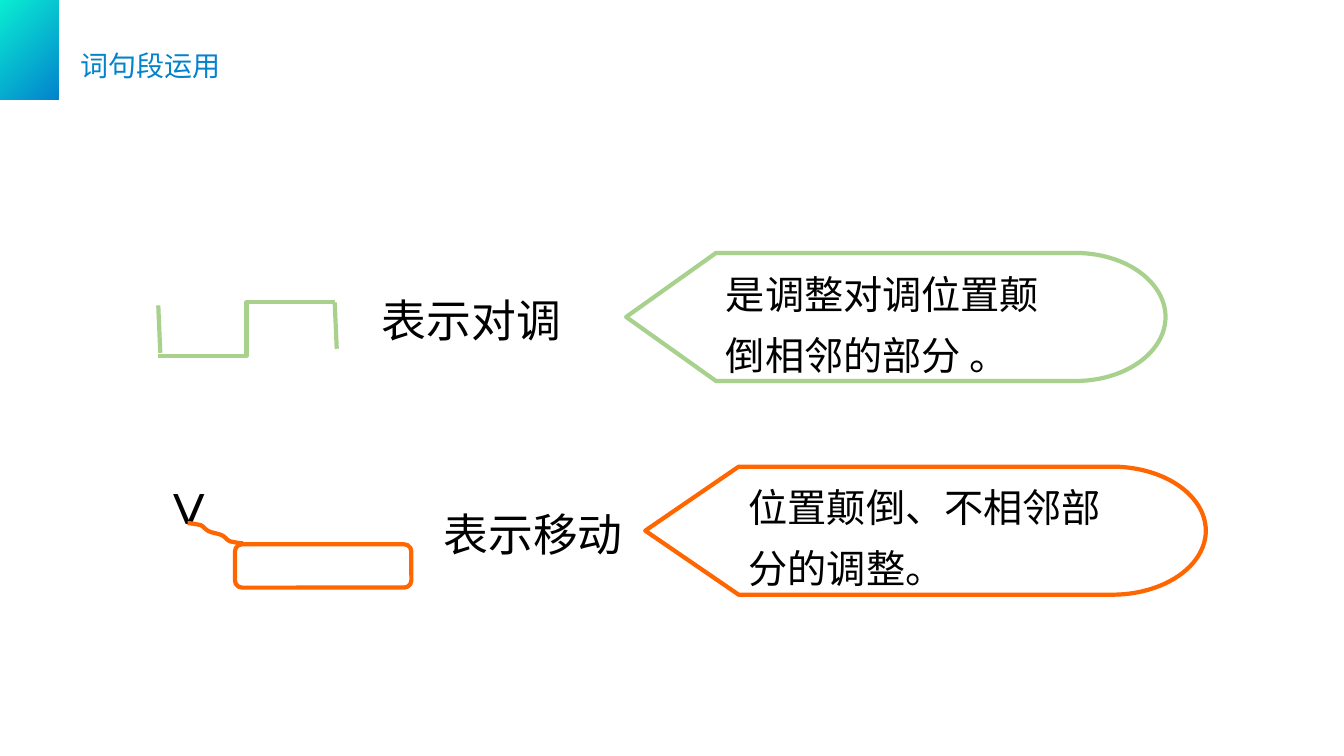
from lxml.etree import SubElement
from pptx import Presentation
from pptx.dml.color import RGBColor
from pptx.enum.shapes import MSO_CONNECTOR, MSO_SHAPE
from pptx.enum.text import MSO_ANCHOR, PP_ALIGN
from pptx.oxml.ns import qn
from pptx.util import Inches, Pt

GREEN, ORANGE, BLUE, TEAL, BLACK = "A9D18E", "FF6600", "0383CD", "0AEDD2", "000000"
TITLE = ("词句段运用", (0.7, 0.46, 2.28, 0.41))
LABELS = [
    ("表示对调", (3.69, 2.82, 2.3, 0.71), 32, 0),
    ("表示移动", (4.3, 4.97, 2.1, 0.64), 32, 0),
    ("<", (1.58, 4.66, 0.5, 0.84), 44, 270),
]
CALLOUTS = [
    ("是调整对调位置颠倒相邻的部分 。", (6.21, 2.51, 5.35, 1.27), GREEN),
    ("位置颠倒、不相邻部分的调整。", (6.4, 4.63, 5.56, 1.27), ORANGE),
]
SWAP_LINES = [
    (MSO_CONNECTOR.ELBOW, (1.57, 3.53, 3.32, 3)),
    (MSO_CONNECTOR.STRAIGHT, (1.57, 3.03, 1.59, 3.5)),
    (MSO_CONNECTOR.STRAIGHT, (3.32, 3, 3.34, 3.46)),
]
MOVED_BOX = (2.33, 5.4, 1.75, 0.43)
WAVE_START = (1.86, 5.19)
WAVE_CURVES = [
    ((1.88, 5.19), (1.95, 5.2), (1.99, 5.21)),
    ((2.03, 5.23), (2.03, 5.25), (2.07, 5.27)),
    ((2.11, 5.29), (2.16, 5.29), (2.2, 5.31)),
    ((2.24, 5.33), (2.24, 5.35), (2.28, 5.37)),
    ((2.32, 5.38), (2.38, 5.39), (2.41, 5.39)),
]
CURVE_STEPS = 6


def color(value):
    return RGBColor.from_string(value)


def inches(values):
    return [Inches(value) for value in values]


def apply(target, settings):
    for name, value in settings.items():
        setattr(target, name, value)


def write(shape, text, size, text_color=BLACK, **spacing):
    frame = shape.text_frame
    apply(frame, {"word_wrap": True, "vertical_anchor": MSO_ANCHOR.MIDDLE})
    paragraph = frame.paragraphs[0]
    apply(paragraph, {"alignment": PP_ALIGN.LEFT, **spacing})
    run = paragraph.add_run()
    run.text = text
    apply(run.font, {"name": "Arial", "size": Pt(size)})
    run.font.color.rgb = color(text_color)


def outline(shape, line_color):
    shape.line.color.rgb = color(line_color)
    shape.line.width = Pt(3)


def add_outlined(slide, kind, box, line_color):
    shape = slide.shapes.add_shape(kind, *inches(box))
    shape.shadow.inherit = False
    shape.fill.background()
    outline(shape, line_color)
    return shape


def add_corner(slide):
    corner = slide.shapes.add_shape(MSO_SHAPE.RECTANGLE, *inches((0, 0, 0.58, 0.99)))
    corner.shadow.inherit = False
    corner.line.fill.background()
    corner.fill.gradient()
    corner.fill.gradient_angle = 315
    for stop, stop_color in zip(corner.fill.gradient_stops, (TEAL, BLUE)):
        stop.color.rgb = color(stop_color)


def add_title(slide):
    text, box = TITLE
    title = slide.shapes.title
    apply(title, dict(zip(("left", "top", "width", "height"), inches(box))))
    write(title, text, 20, BLUE, line_spacing=0.9)


def add_label(slide, text, box, size, rotation):
    label = slide.shapes.add_textbox(*inches(box))
    label.rotation = rotation
    write(label, text, size)


def add_swap_line(slide, kind, ends):
    connector = slide.shapes.add_connector(kind, *inches(ends))
    outline(connector, GREEN)
    SubElement(connector._element.spPr, qn("a:effectLst"))


def wave_points():
    start = WAVE_START
    for first, second, end in WAVE_CURVES:
        for step in range(1, CURVE_STEPS + 1):
            t = step / CURVE_STEPS
            weights = ((1 - t) ** 3, 3 * t * (1 - t) ** 2, 3 * t * t * (1 - t), t ** 3)
            corners = (start, first, second, end)
            yield inches(
                sum(weight * corner[axis] for weight, corner in zip(weights, corners))
                for axis in (0, 1)
            )
        start = end


def add_wave(slide):
    builder = slide.shapes.build_freeform(*inches(WAVE_START))
    builder.add_line_segments(list(wave_points()), close=False)
    wave = builder.convert_to_shape()
    wave.shadow.inherit = False
    wave.fill.background()
    outline(wave, ORANGE)


def main():
    presentation = Presentation()
    apply(presentation, {"slide_width": Inches(13.33), "slide_height": Inches(7.5)})
    slide = presentation.slides.add_slide(presentation.slide_layouts[5])
    add_corner(slide)
    add_title(slide)
    for kind, ends in SWAP_LINES:
        add_swap_line(slide, kind, ends)
    add_outlined(slide, MSO_SHAPE.ROUNDED_RECTANGLE, MOVED_BOX, ORANGE)
    for label in LABELS:
        add_label(slide, *label)
    add_wave(slide)
    for text, box, line_color in CALLOUTS:
        callout = add_outlined(slide, MSO_SHAPE.FLOWCHART_DISPLAY, box, line_color)
        write(callout, text, 28, line_spacing=1.3)
    presentation.save("out.pptx")


if __name__ == "__main__":
    main()
